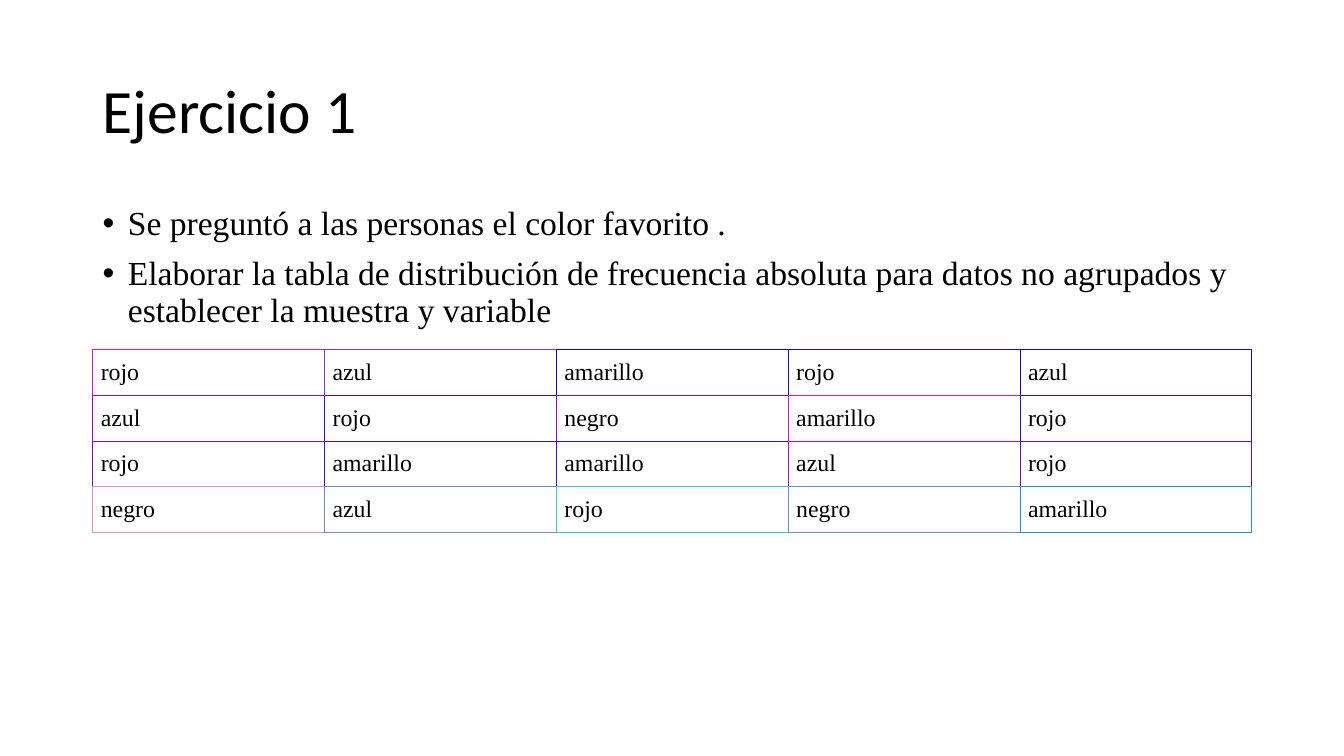
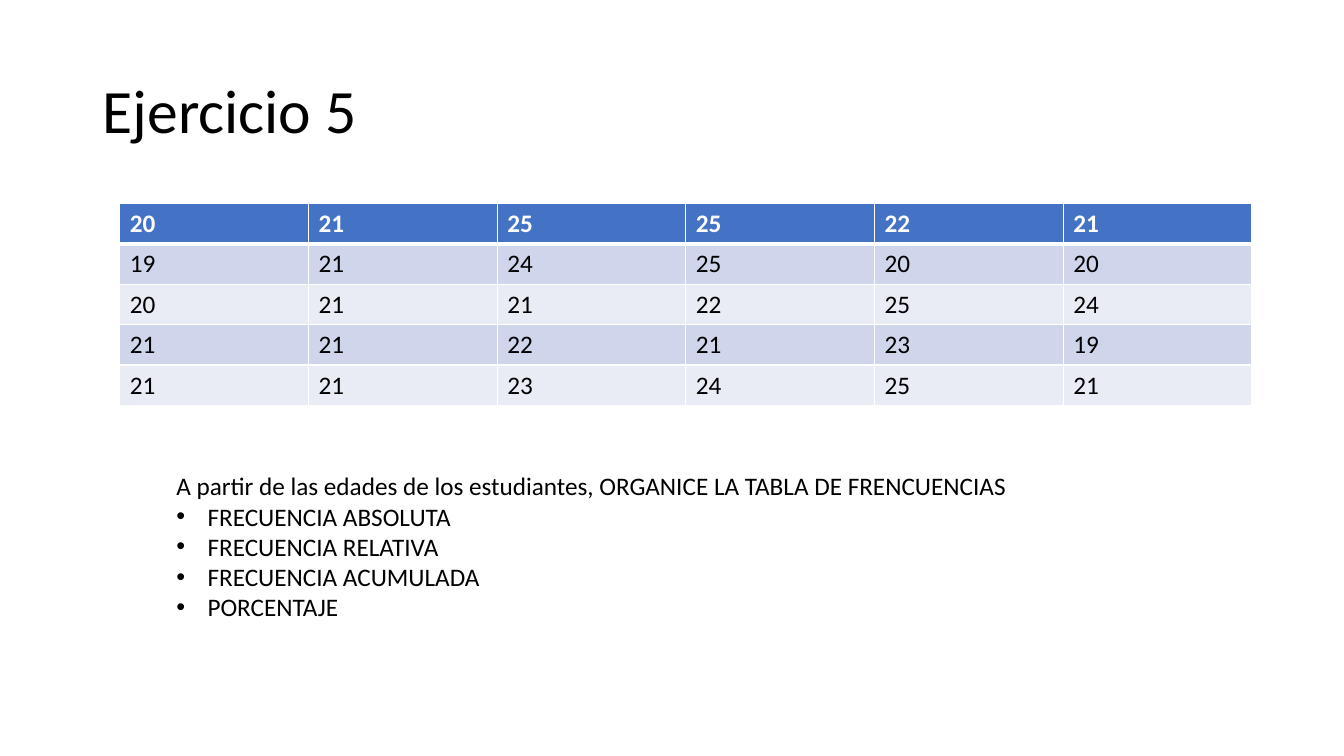
"""Build two statistics exercise slides, each with a title, a table and instructions."""
from dataclasses import dataclass
from typing import NamedTuple, Optional

from lxml import etree
from pptx import Presentation
from pptx.dml.color import RGBColor
from pptx.enum.text import MSO_ANCHOR
from pptx.oxml.ns import qn
from pptx.slide import Slide
from pptx.table import _Cell
from pptx.text.text import TextFrame
from pptx.util import Emu, Inches, Pt

TOP, MIDDLE = MSO_ANCHOR.TOP, MSO_ANCHOR.MIDDLE
SLIDE_WIDTH, SLIDE_HEIGHT = Inches(13.33), Inches(7.5)


@dataclass(frozen=True)
class Theme:
    """Colours, fonts and type sizes of the presentation."""

    black: str = "000000"
    white: str = "FFFFFF"
    header: str = "4472C4"
    bands: tuple[str, str] = ("CFD5EA", "E9EBF5")
    sans: str = "Calibri"
    serif: str = "Times New Roman"
    title_size: float = 44
    body_size: float = 24
    text_size: float = 18
    cell_size: float = 17
    thin: float = 0.75
    rule: float = 1
    header_rule: float = 3


THEME = Theme()


class Box(NamedTuple):
    """A place on the slide, in percent of its width and height."""

    left: float
    top: float
    width: float
    height: float

    def lengths(self) -> tuple[Emu, Emu, Emu, Emu]:
        """Return the place as lengths."""
        sides = (SLIDE_WIDTH, SLIDE_HEIGHT) * 2
        return tuple(Emu(round(side * share / 100)) for side, share in zip(sides, self))


class Border(NamedTuple):
    """Colour and width of one side of a cell."""

    color: str
    width: float


class CellStyle(NamedTuple):
    """Look of one cell, with borders left, right, top and bottom."""

    borders: tuple[Border, Border, Border, Border]
    font: str
    size: float
    fill: Optional[str] = None
    color: str = THEME.black
    bold: bool = False
    anchor: MSO_ANCHOR = TOP
    inset: Optional[float] = None


TITLE_BOX = Box(6.9, 5.33, 86.25, 19.33)
BODY_BOX = Box(6.9, 26.67, 86.25, 63.47)
COLOR_TABLE_BOX = Box(6.9, 46.27, 86.25, 24.13)
AGE_TABLE_BOX = Box(8.92, 26.93, 84.23, 26.67)
TASK_BOX = Box(12.38, 61.6, 64, 21.6)

FAVOURITE_QUESTION = (
    "Se preguntó a las personas el color favorito .",
    "Elaborar la tabla de distribución de frecuencia absoluta para datos no agrupados y "
    "establecer la muestra y variable",
)
FAVOURITE_COLORS = (
    ("rojo", "azul", "amarillo", "rojo", "azul"),
    ("azul", "rojo", "negro", "amarillo", "rojo"),
    ("rojo", "amarillo", "amarillo", "azul", "rojo"),
    ("negro", "azul", "rojo", "negro", "amarillo"),
)
BORDER_COLORS = (
    ("F009CB", "8034CB", "0000CB", "2007CB", "1005CB"),
    ("A005CB", "4005CB", "800ACB", "F00FCB", "300FCB"),
    ("700ECB", "400ECB", "300CCB", "C00CCB", "600CCB"),
    ("E08AC8", "708BC8", "30CCCB", "6092CB", "2090CB"),
)
AGES = (
    ("20", "21", "25", "25", "22", "21"),
    ("19", "21", "24", "25", "20", "20"),
    ("20", "21", "21", "22", "25", "24"),
    ("21", "21", "22", "21", "23", "19"),
    ("21", "21", "23", "24", "25", "21"),
)
AGE_TASK = (
    "A partir de las edades de los estudiantes, ORGANICE LA TABLA DE FRENCUENCIAS",
    "FRECUENCIA ABSOLUTA",
    "FRECUENCIA RELATIVA",
    "FRECUENCIA ACUMULADA",
    "PORCENTAJE",
)


def write_text(frame: TextFrame, lines: tuple[str, ...], *, font: str, size: float,
               color: str = THEME.black, bold: bool = False, line_spacing: float = 1,
               space_before: float = 0, bullet_indent: float = 0, first_bullet: int = 0) -> None:
    """Write one paragraph per line, with bullets from first_bullet on."""
    for index, line in enumerate(lines):
        paragraph = frame.paragraphs[0] if index == 0 else frame.add_paragraph()
        paragraph.line_spacing = line_spacing
        paragraph.space_before = Pt(space_before)
        run = paragraph.add_run()
        run.text = line
        run.font.name, run.font.size, run.font.bold = font, Pt(size), bold
        run.font.color.rgb = RGBColor.from_string(color)
        if bullet_indent and index >= first_bullet:
            properties = paragraph._p.get_or_add_pPr()
            properties.set("marL", str(Inches(bullet_indent)))
            properties.set("indent", str(-Inches(bullet_indent)))
            etree.SubElement(properties, qn("a:buFont"), typeface="Arial")
            etree.SubElement(properties, qn("a:buChar"), char="•")


def add_text(slide: Slide, box: Box, lines: tuple[str, ...], *,
             anchor: MSO_ANCHOR = TOP, **text_format) -> None:
    """Add a wrapped text box."""
    frame = slide.shapes.add_textbox(*box.lengths()).text_frame
    frame.word_wrap = True
    frame.vertical_anchor = anchor
    write_text(frame, lines, **text_format)


def set_borders(cell: _Cell, borders: tuple[Border, ...]) -> None:
    """Draw the four sides of a cell."""
    properties = cell._tc.get_or_add_tcPr()
    for index, (side, border) in enumerate(zip("LRTB", borders)):
        line = etree.Element(qn(f"a:ln{side}"), w=str(Pt(border.width)))
        fill = etree.SubElement(line, qn("a:solidFill"))
        etree.SubElement(fill, qn("a:srgbClr"), val=border.color)
        properties.insert(index, line)


def color_cell_style(row: int, column: int) -> CellStyle:
    """Give a cell its own colour left and top, and its neighbours' right and below."""
    own = BORDER_COLORS[row][column]
    right = BORDER_COLORS[row][min(column + 1, len(BORDER_COLORS[row]) - 1)]
    below = BORDER_COLORS[min(row + 1, len(BORDER_COLORS) - 1)][column]
    borders = tuple(Border(color, THEME.thin) for color in (own, right, own, below))
    return CellStyle(borders, THEME.serif, THEME.cell_size, anchor=MIDDLE, inset=0.08)


def age_cell_style(row: int, column: int) -> CellStyle:
    """Give the header row a strong fill and the other rows alternating bands."""
    is_header = row == 0
    above = THEME.header_rule if row == 1 else THEME.rule
    below = THEME.header_rule if is_header else THEME.rule
    widths = (THEME.rule, THEME.rule, above, below)
    return CellStyle(
        tuple(Border(THEME.white, width) for width in widths), THEME.sans, THEME.text_size,
        fill=THEME.header if is_header else THEME.bands[(row - 1) % 2],
        color=THEME.white if is_header else THEME.black, bold=is_header)


def style_cell(cell: _Cell, text: str, style: CellStyle) -> None:
    """Fill, frame and write one cell."""
    cell.vertical_anchor = style.anchor
    if style.inset is not None:
        cell.margin_left = cell.margin_right = Inches(style.inset)
        cell.margin_top = cell.margin_bottom = Inches(style.inset)
    if style.fill is None:
        cell.fill.background()
    else:
        cell.fill.solid()
        cell.fill.fore_color.rgb = RGBColor.from_string(style.fill)
    set_borders(cell, style.borders)
    write_text(cell.text_frame, (text,), font=style.font, size=style.size,
               color=style.color, bold=style.bold)


def add_grid(slide: Slide, box: Box, values: tuple[tuple[str, ...], ...], cell_style) -> None:
    """Add a table of equal rows and columns, styled by row and column."""
    table = slide.shapes.add_table(len(values), len(values[0]), *box.lengths()).table
    table.first_row = table.horz_banding = False
    for row, texts in enumerate(values):
        for column, text in enumerate(texts):
            style_cell(table.cell(row, column), text, cell_style(row, column))


def add_titled_slide(presentation: Presentation, title: str) -> Slide:
    """Add a blank slide with the shared title style."""
    slide = presentation.slides.add_slide(presentation.slide_layouts[6])
    add_text(slide, TITLE_BOX, (title,), anchor=MIDDLE, font=THEME.sans,
             size=THEME.title_size, line_spacing=0.9)
    return slide


def main() -> None:
    """Build and save the presentation."""
    presentation = Presentation()
    presentation.slide_width, presentation.slide_height = SLIDE_WIDTH, SLIDE_HEIGHT

    colors_slide = add_titled_slide(presentation, "Ejercicio 1")
    add_text(colors_slide, BODY_BOX, FAVOURITE_QUESTION, font=THEME.serif,
             size=THEME.body_size, line_spacing=0.9, space_before=10, bullet_indent=0.25)
    add_grid(colors_slide, COLOR_TABLE_BOX, FAVOURITE_COLORS, color_cell_style)

    ages_slide = add_titled_slide(presentation, "Ejercicio 5")
    add_grid(ages_slide, AGE_TABLE_BOX, AGES, age_cell_style)
    add_text(ages_slide, TASK_BOX, AGE_TASK, font=THEME.sans, size=THEME.text_size,
             bullet_indent=0.31, first_bullet=1)

    presentation.save("out.pptx")


if __name__ == "__main__":
    main()
